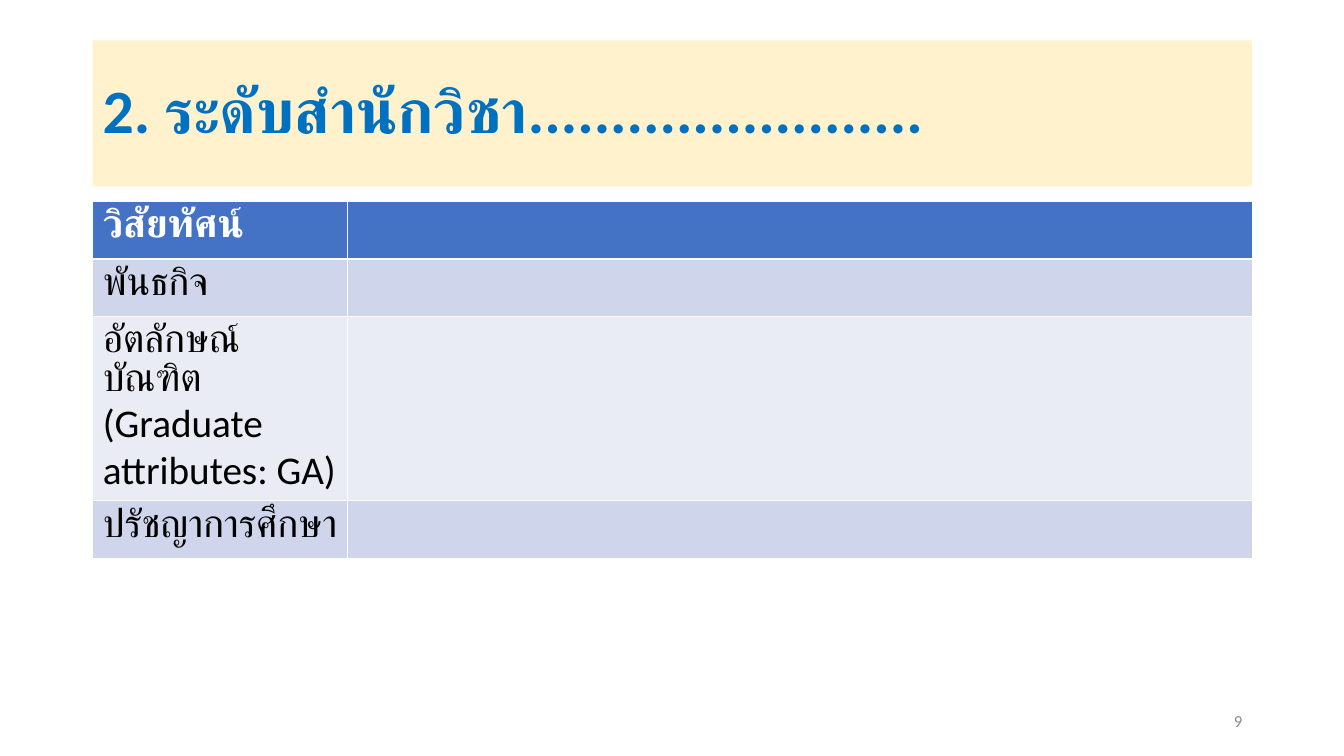
"""Build the school-level vision and mission slide."""
from pptx import Presentation
from pptx.dml.color import RGBColor
from pptx.enum.shapes import MSO_SHAPE
from pptx.enum.text import MSO_ANCHOR, PP_ALIGN
from pptx.util import Inches, Pt


def color(value):
    return RGBColor.from_string(value)


def write(tf, text, size, ink, bold=False, align=PP_ALIGN.LEFT):
    tf.text = text
    tf.word_wrap = True
    p = tf.paragraphs[0]
    p.alignment = align
    for r in p.runs:
        r.font.name = "Calibri"
        r.font.size = Pt(size)
        r.font.bold = bold
        r.font.color.rgb = color(ink)


prs = Presentation()
prs.slide_width, prs.slide_height = Inches(13.33), Inches(7.5)
s = prs.slides.add_slide(prs.slide_layouts[6])

title = s.shapes.add_shape(MSO_SHAPE.RECTANGLE, Inches(0.92), Inches(0.4), Inches(11.5), Inches(1.45))
title.shadow.inherit = False
title.fill.solid()
title.fill.fore_color.rgb = color("FFF2CC")
title.line.fill.background()
title.text_frame.vertical_anchor = MSO_ANCHOR.MIDDLE
write(title.text_frame, "2. ระดับสำนักวิชา........................", 44, "0070C0", bold=True)
title.text_frame.paragraphs[0].line_spacing = 0.9

rows = [
    ("วิสัยทัศน์", 0.57, "4472C4"),
    ("พันธกิจ", 0.57, "CFD5EA"),
    ("อัตลักษณ์บัณฑิต (Graduate attributes: GA)", 1.83, "E9EBF5"),
    ("ปรัชญาการศึกษา", 0.57, "CFD5EA"),
]
height = sum(row[1] for row in rows)
table = s.shapes.add_table(len(rows), 2, Inches(0.92), Inches(2), Inches(11.5), Inches(height)).table
table.columns[0].width = Inches(2.53)
table.columns[1].width = Inches(8.97)
for i, (label, row_height, fill) in enumerate(rows):
    table.rows[i].height = Inches(row_height)
    for cell in table.rows[i].cells:
        cell.fill.solid()
        cell.fill.fore_color.rgb = color(fill)
    header = i == 0
    write(table.cell(i, 0).text_frame, label, 28, "FFFFFF" if header else "000000", bold=header)

number = s.shapes.add_textbox(Inches(9.42), Inches(6.95), Inches(3), Inches(0.4))
number.text_frame.vertical_anchor = MSO_ANCHOR.MIDDLE
write(number.text_frame, "9", 12, "8C8C8C", align=PP_ALIGN.RIGHT)

prs.save("out.pptx")
